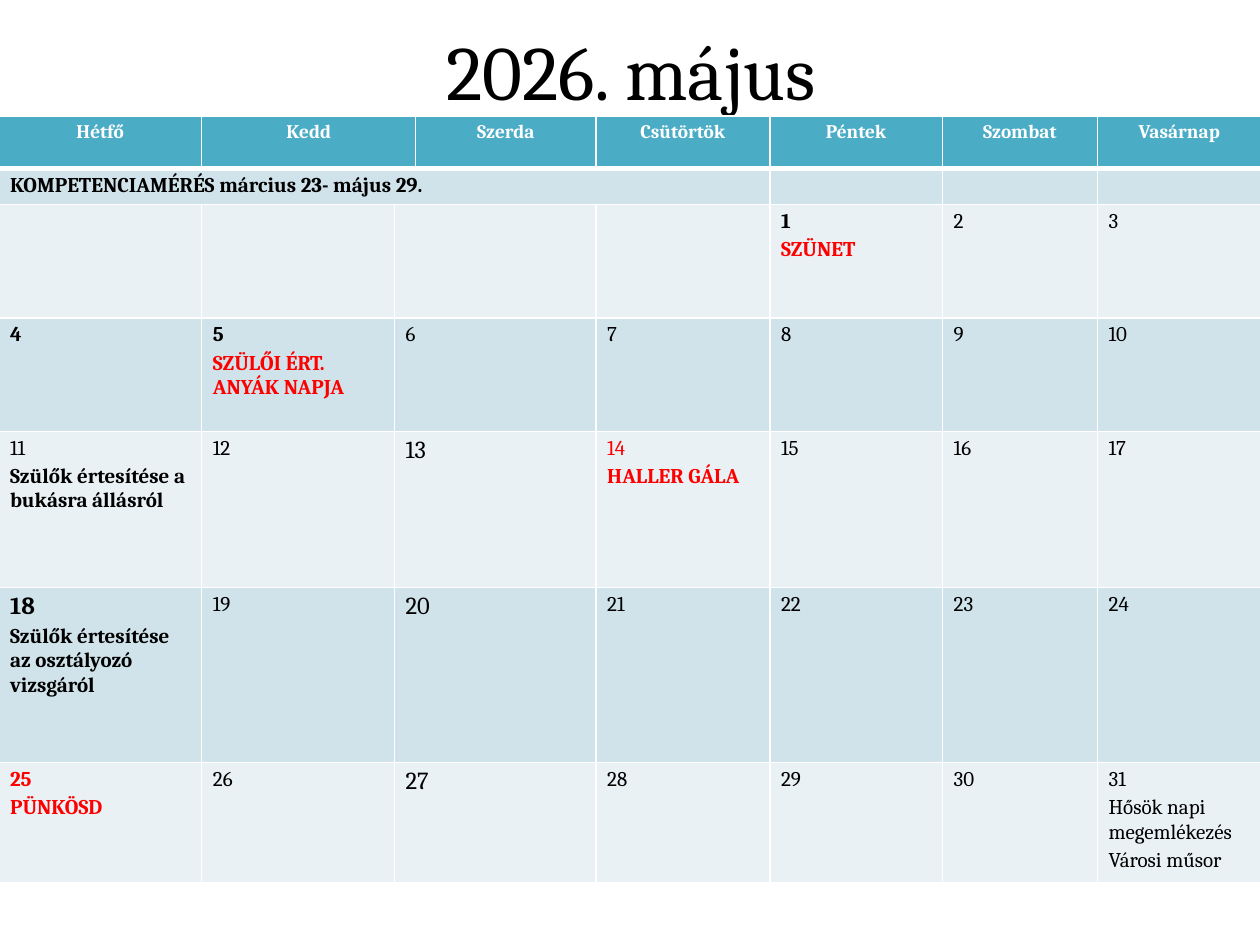
from dataclasses import dataclass

from lxml import etree
from pptx import Presentation
from pptx import util as u
from pptx.dml.color import RGBColor
from pptx.enum import text
from pptx.oxml import ns

FONT = "Cambria"
BLACK, WHITE, RED = "000000", "FFFFFF", "FF0000"
HEADER_FILL, DARK_BAND, LIGHT_BAND = "4BACC6", "D0E3EA", "E9F1F5"

COLUMNS = [1.61, 1.53, 0.17, 1.43, 1.38, 1.37, 1.23, 1.3]
ROWS = [0.42, 0.27, 0.9, 0.9, 1.24, 1.39, 0.95]
HEADER_STARTS = [0, 1, 3, 4, 5, 6, 7]
DAY_STARTS = [0, 1, 2, 4, 5, 6, 7]

WEEKDAYS = ["Hétfő", "Kedd", "Szerda", "Csütörtök", "Péntek", "Szombat", "Vasárnap"]
FIRST_WEEKDAY, MONTH_LENGTH = 4, 31
BOLD_DAYS, RED_DAYS, LARGE_DAYS = {1, 4, 5, 18, 25}, {14, 25}, {13, 18, 20, 27}


@dataclass
class Entry:
    """One paragraph of a calendar cell."""
    words: str
    bold: bool = True
    color: str = BLACK
    size: int = 12
    align: text.PP_ALIGN = text.PP_ALIGN.LEFT


EVENTS = {
    1: [Entry("SZÜNET", color=RED)],
    5: [Entry("SZÜLŐI ÉRT.\vANYÁK NAPJA", color=RED)],
    11: [Entry("Szülők értesítése a bukásra állásról")],
    14: [Entry("HALLER GÁLA", color=RED)],
    18: [Entry("Szülők értesítése az osztályozó vizsgáról")],
    25: [Entry("PÜNKÖSD", color=RED)],
    31: [Entry("Hősök napi megemlékezés", bold=False), Entry("Városi műsor", bold=False)],
}


def rgb(value: str) -> RGBColor:
    """Turn a hex string into a colour."""
    return RGBColor.from_string(value)


def format_run(run, entry: Entry) -> None:
    """Apply the look of an entry to a run."""
    run.font.name, run.font.size, run.font.bold = FONT, u.Pt(entry.size), entry.bold
    run.font.color.rgb = rgb(entry.color)


def draw_borders(cell, bottom: float) -> None:
    """Give a cell white borders with a bottom of the given points."""
    properties = cell._tc.get_or_add_tcPr()
    for side, points in (("L", 1), ("R", 1), ("T", 1), ("B", bottom)):
        line = etree.SubElement(properties, ns.qn(f"a:ln{side}"), w=str(u.Pt(points)))
        solid = etree.SubElement(line, ns.qn("a:solidFill"))
        etree.SubElement(solid, ns.qn("a:srgbClr"), val=WHITE)


def write_cell(cell, entries: list[Entry]) -> None:
    """Write the entries into a cell, one paragraph each."""
    cell.margin_left = cell.margin_right = u.Inches(0.09)
    cell.margin_top = cell.margin_bottom = u.Inches(0.04)
    frame = cell.text_frame
    if not entries:
        etree.SubElement(frame.paragraphs[0]._p, ns.qn("a:endParaRPr"), sz="1200")
    for index, entry in enumerate(entries):
        paragraph = frame.add_paragraph() if index else frame.paragraphs[0]
        paragraph.text = entry.words
        paragraph.alignment = entry.align
        if index:
            paragraph.space_before = u.Pt(0.2 * entry.size)
        for run in paragraph.runs:
            format_run(run, entry)
        for line_break in paragraph._p.findall(ns.qn("a:br")):
            etree.SubElement(line_break, ns.qn("a:rPr"), sz=str(entry.size * 100))


def day_entries(day: int) -> list[Entry]:
    """List what a day's cell says, or nothing outside the month."""
    if not 1 <= day <= MONTH_LENGTH:
        return []
    number = Entry(str(day), day in BOLD_DAYS, RED if day in RED_DAYS else BLACK,
                   14 if day in LARGE_DAYS else 12)
    return [number, *EVENTS.get(day, [])]


def write_row(table, row: int, starts: list[int], contents: list[list[Entry]]) -> None:
    """Merge a row into its logical cells and fill them."""
    ends = [start - 1 for start in starts[1:]] + [len(COLUMNS) - 1]
    for start, end, entries in zip(starts, ends, contents):
        cell = table.cell(row, start)
        if end > start:
            cell.merge(table.cell(row, end))
        write_cell(cell, entries)


def draw_calendar(slide) -> None:
    """Draw the month as a table."""
    table = slide.shapes.add_table(
        len(ROWS), len(COLUMNS), u.Inches(-0.01), u.Inches(0.92),
        u.Inches(sum(COLUMNS)), u.Inches(sum(ROWS))).table
    for column, width in zip(table.columns, COLUMNS):
        column.width = u.Inches(width)
    for index, (row, height) in enumerate(zip(table.rows, ROWS)):
        row.height = u.Inches(height)
        band = DARK_BAND if index % 2 else LIGHT_BAND
        for cell in row.cells:
            draw_borders(cell, bottom=1 if index else 3)
            cell.fill.solid()
            cell.fill.fore_color.rgb = rgb(band if index else HEADER_FILL)

    write_row(table, 0, HEADER_STARTS,
              [[Entry(name, True, WHITE, 11, text.PP_ALIGN.CENTER)] for name in WEEKDAYS])
    write_row(table, 1, [0, 5, 6, 7],
              [[Entry("KOMPETENCIAMÉRÉS március 23- május 29.")], [], [], []])
    for week in range(len(ROWS) - 2):
        monday = week * 7 + 1 - FIRST_WEEKDAY
        write_row(table, week + 2, DAY_STARTS,
                  [day_entries(day) for day in range(monday, monday + 7)])


def draw_title(slide) -> None:
    """Place the month's name above the calendar."""
    title = slide.shapes.title
    title.left, title.top = u.Inches(0.51), u.Inches(-0.19)
    title.width, title.height = u.Inches(9), u.Inches(1.49)
    title.text_frame.text = "2026. május"
    title.text_frame.vertical_anchor = text.MSO_ANCHOR.MIDDLE
    paragraph = title.text_frame.paragraphs[0]
    paragraph.alignment = text.PP_ALIGN.CENTER
    format_run(paragraph.runs[0], Entry("", bold=False, size=44))


def main() -> None:
    """Build and save the calendar slide."""
    deck = Presentation()
    deck.slide_width, deck.slide_height = u.Inches(10), u.Inches(7.5)
    slide = deck.slides.add_slide(deck.slide_layouts[5])
    draw_title(slide)
    draw_calendar(slide)
    deck.save("out.pptx")


if __name__ == "__main__":
    main()
